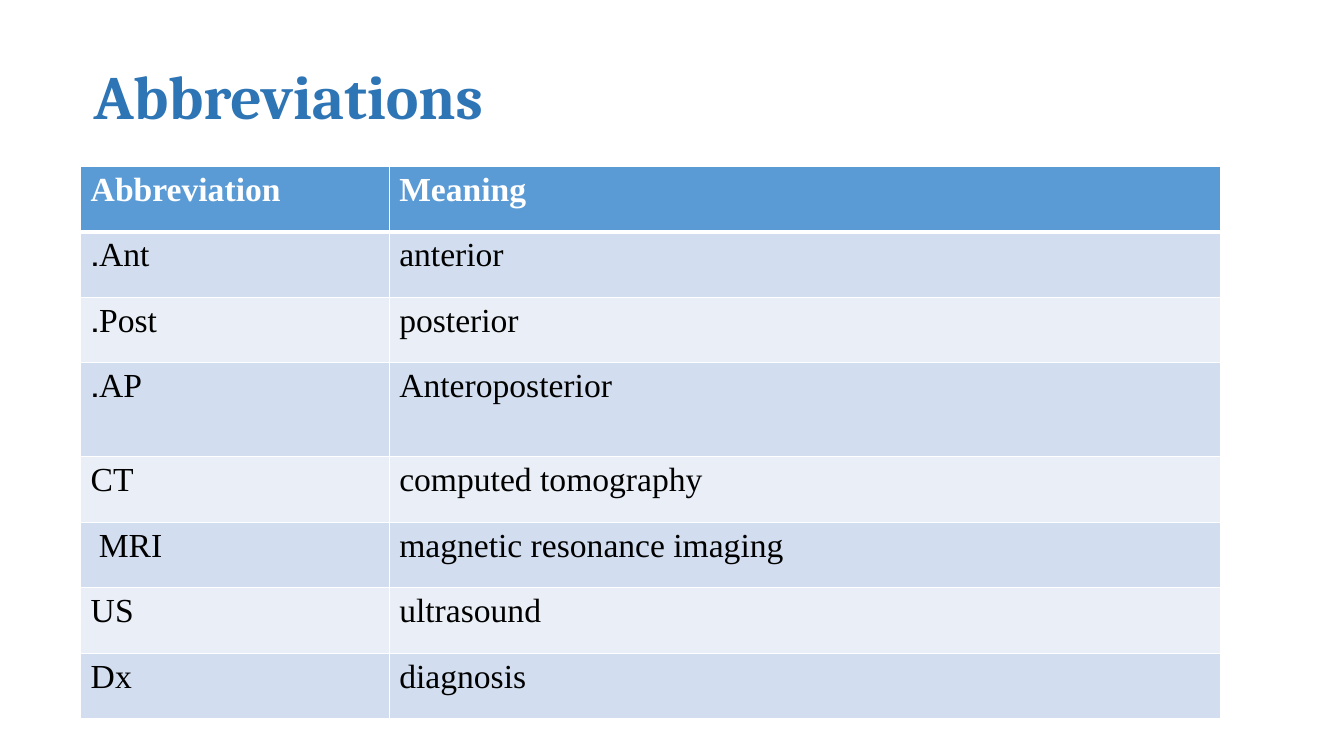
import lxml.etree
import pptx
import pptx.dml.color
import pptx.enum.text
import pptx.oxml
import pptx.oxml.ns
import pptx.util

WIDTH, HEIGHT = 13.33, 7.5
ENTRIES = [
    ("Ant.", "anterior"),
    ("Post.", "posterior"),
    ("AP.", "Anteroposterior"),
    ("CT", "computed tomography"),
    ("MRI", "magnetic resonance imaging"),
    ("US", "ultrasound"),
    ("Dx", "diagnosis"),
]


def color(value):
    return pptx.dml.color.RGBColor.from_string(value)


class Deck:
    title_font, body_font = "Cambria", "Times New Roman"
    title_color, header_fill = "2E75B6", "5B9BD5"
    bands = ("D2DEEF", "EAEFF7")
    white, black = "FFFFFF", "000000"

    def __init__(self):
        self.prs = pptx.Presentation()
        self.prs.slide_width = pptx.util.Inches(WIDTH)
        self.prs.slide_height = pptx.util.Inches(HEIGHT)
        self.s = self.prs.slides.add_slide(self.prs.slide_layouts[6])

    def box(self, x, y, w, h):
        sw, sh = self.prs.slide_width, self.prs.slide_height
        return [round(v) for v in (x * sw, y * sh, w * sw, h * sh)]

    def add_text(self, tf, text, size, font, fill, bold):
        p = tf.paragraphs[0]
        p.alignment = pptx.enum.text.PP_ALIGN.LEFT
        p._p.get_or_add_pPr().set("rtl", "1")
        r = p.add_run()
        r.text = text
        r.font.size = pptx.util.Pt(size)
        r.font.name = font
        r.font.bold = bold
        r.font.color.rgb = color(fill)
        return p

    def title(self, text, x, y, w, h):
        sp = self.s.shapes.add_textbox(*self.box(x, y, w, h))
        tf = sp.text_frame
        tf.word_wrap = True
        tf.vertical_anchor = pptx.enum.text.MSO_ANCHOR.MIDDLE
        p = self.add_text(tf, text, 44, self.title_font, self.title_color, True)
        p.line_spacing = 0.9

    def border(self, cell, side, points):
        tag = pptx.oxml.ns.qn(f"a:ln{side}")
        ln = lxml.etree.SubElement(cell._tc.get_or_add_tcPr(), tag, w=str(pptx.util.Pt(points)))
        fill = lxml.etree.SubElement(ln, pptx.oxml.ns.qn("a:solidFill"))
        lxml.etree.SubElement(fill, pptx.oxml.ns.qn("a:srgbClr"), val=self.white)

    def cell(self, cell, text, row):
        header = row == 0
        for side in "LRTB":
            thick = (header and side == "B") or (row == 1 and side == "T")
            self.border(cell, side, 3 if thick else 1)
        cell.fill.solid()
        cell.fill.fore_color.rgb = color(self.header_fill if header else self.bands[(row - 1) % 2])
        ink = self.white if header else self.black
        self.add_text(cell.text_frame, text, 24, self.body_font, ink, header)

    def table(self, rows, x, y, widths, heights):
        area = self.box(x, y, sum(widths), sum(heights))
        table = self.s.shapes.add_table(len(rows), len(widths), *area).table
        table.first_row = table.horz_banding = False
        for column, width in zip(table.columns, widths):
            column.width = round(width * self.prs.slide_width)
        for i, (row, height) in enumerate(zip(rows, heights)):
            table.rows[i].height = round(height * self.prs.slide_height)
            for j, text in enumerate(row):
                self.cell(table.cell(i, j), text, i)
        return table


def main():
    deck = Deck()
    deck.title("Abbreviations", 0.83 / WIDTH, 0.4 / HEIGHT, 9.96 / WIDTH, 1.18 / HEIGHT)
    rows = [("Abbreviation", "Meaning")] + ENTRIES
    heights = [(0.93 if name == "AP." else 0.65) / HEIGHT for name, _ in rows]
    widths = [3.06 / WIDTH, 8.25 / WIDTH]
    table = deck.table(rows, 0.8 / WIDTH, 1.65 / HEIGHT, widths, heights)
    mri_row = [name for name, _ in rows].index("MRI")
    table.cell(mri_row, 0).margin_left = pptx.util.Inches(0.18)
    deck.prs.save("out.pptx")


if __name__ == "__main__":
    main()
